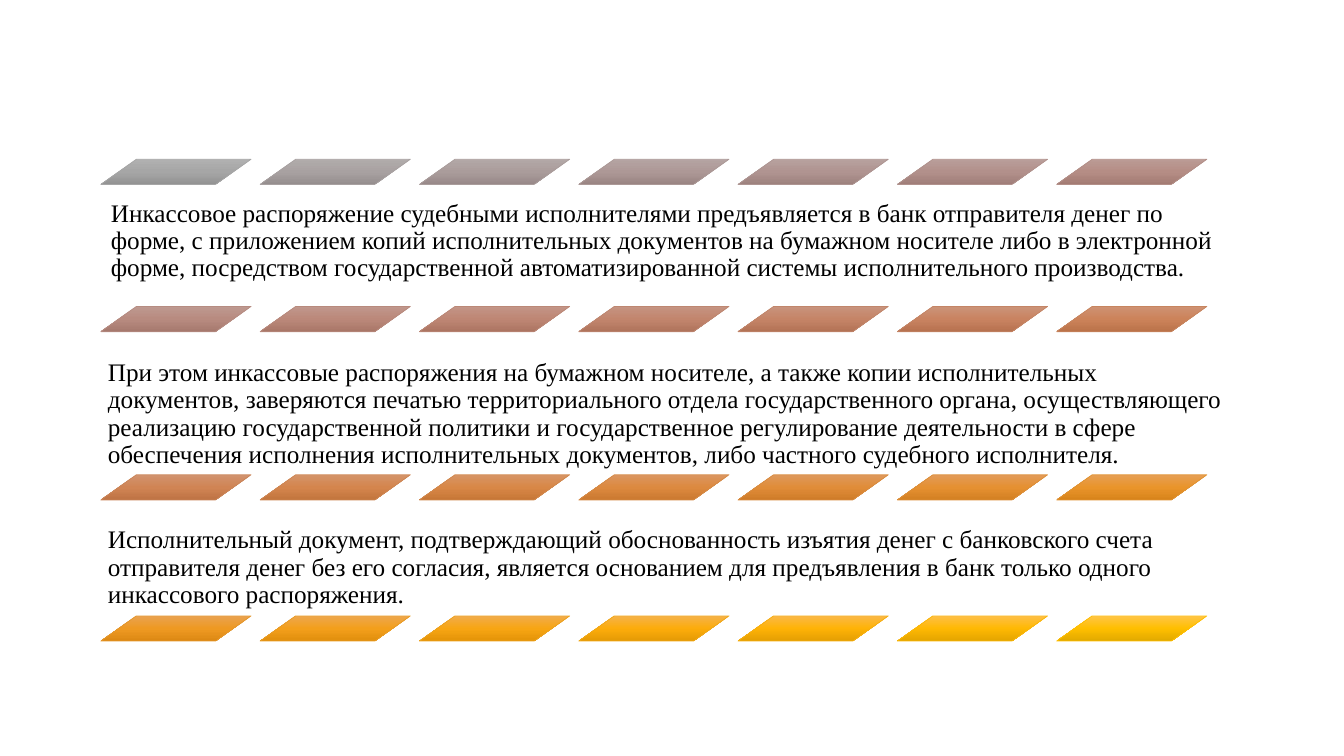
from colorsys import hls_to_rgb
from copy import deepcopy

from pptx import Presentation
from pptx.dml.color import RGBColor
from pptx.enum import shapes, text
from pptx.oxml.ns import qn
from pptx.util import Inches, Pt

NOTES = [
    ("Инкассовое распоряжение судебными исполнителями предъявляется в банк отправителя денег по форме, с приложением копий исполнительных документов на бумажном носителе либо в электронной форме, посредством государственной автоматизированной системы исполнительного производства.",
     (1.03, 1.79, 11.19, 1.08)),
    ("При этом инкассовые распоряжения на бумажном носителе, а также копии исполнительных документов, заверяются печатью территориального отдела государственного органа, осуществляющего реализацию государственной политики и государственное регулирование деятельности в сфере обеспечения исполнения исполнительных документов, либо частного судебного исполнителя.",
     (1, 3.43, 11.19, 1.29)),
    ("Исполнительный документ, подтверждающий обоснованность изъятия денег с банковского счета отправителя денег без его согласия, является основанием для предъявления в банк только одного инкассового распоряжения.",
     (1, 5.09, 11.19, 1.02)),
]
ROWS = [1.58, 3.04, 4.71, 6.11]
COLS, LEFT, STEP = 7, 1, 1.58
WIDE, HIGH, SLANT = 1.49, 0.25, 1.41
INSET = 0.07

THEME = {
    "font": "Times New Roman",
    "size": 18,
    "ink": RGBColor(0, 0, 0),
    "start": (0, 0.65, 0),
    "end": (0.125, 0.5, 1),
    "line": 0.5,
    "gamma": 2.2,
    "stops": [(0, 1.02, 1.03, 0.94, 0.06),
              (0.5, 1, 1.1, 1, 0),
              (1, 0.99, 1.2, 0.78, 0)],
}


def tone(part, light=1, sat=1, scale=1, lift=0):
    hue, lum, pure = (a + (b - a) * part
                      for a, b in zip(THEME["start"], THEME["end"]))
    rgb = hls_to_rgb(hue, lum * light, min(1, pure * sat))
    gam = THEME["gamma"]
    vals = [(max(0, c) ** gam * scale + lift) ** (1 / gam) for c in rgb]
    return RGBColor(*(min(255, round(v * 255)) for v in vals))


def add_tile(slide, left, top, part):
    tile = slide.shapes.add_shape(
        shapes.MSO_SHAPE.PARALLELOGRAM,
        Inches(left), Inches(top), Inches(WIDE), Inches(HIGH))
    tile.adjustments[0] = SLANT
    tile.shadow.inherit = False
    tile.fill.gradient()
    tile.fill.gradient_angle = 270
    stops = tile._element.spPr.find(".//" + qn("a:gsLst"))
    stops.append(deepcopy(stops[0]))
    for stop, (place, *mods) in zip(tile.fill.gradient_stops, THEME["stops"]):
        stop.position = place
        stop.color.rgb = tone(part, *mods)
    tile.line.color.rgb = tone(part)
    tile.line.width = Pt(THEME["line"])


def add_note(slide, words, area):
    frame = slide.shapes.add_textbox(*map(Inches, area)).text_frame
    frame.word_wrap = True
    frame.vertical_anchor = text.MSO_ANCHOR.BOTTOM
    frame.margin_left = frame.margin_right = Inches(INSET)
    frame.margin_top = frame.margin_bottom = Inches(INSET)
    para = frame.paragraphs[0]
    para.line_spacing = 0.9
    run = para.add_run()
    run.text = words
    run.font.name = THEME["font"]
    run.font.size = Pt(THEME["size"])
    run.font.color.rgb = THEME["ink"]


def main():
    deck = Presentation()
    deck.slide_width, deck.slide_height = Inches(13.33), Inches(7.5)
    slide = deck.slides.add_slide(deck.slide_layouts[6])
    last = len(ROWS) * COLS - 1
    for row, top in enumerate(ROWS):
        for col in range(COLS):
            add_tile(slide, LEFT + col * STEP, top, (row * COLS + col) / last)
        if row < len(NOTES):
            add_note(slide, *NOTES[row])
    deck.save("out.pptx")


if __name__ == "__main__":
    main()
